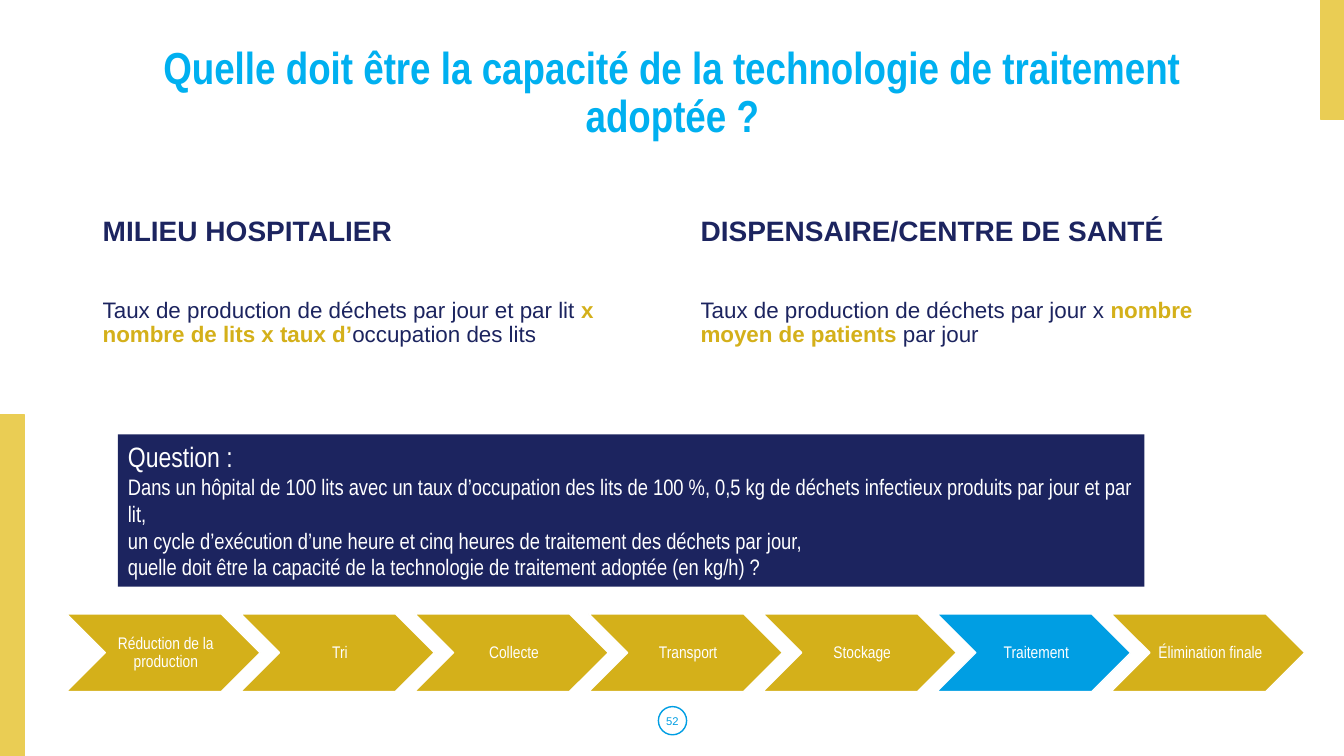
from pptx import Presentation
from pptx.dml.color import RGBColor
from pptx.enum.shapes import MSO_SHAPE
from pptx.enum.text import MSO_ANCHOR, PP_ALIGN
from pptx.util import Inches, Pt

THEME = {
    "navy": "1C245F", "gold": "D4B01A", "pale_gold": "EACD54",
    "blue": "009EE3", "title_blue": "00B0F0", "white": "FFFFFF",
    "narrow": "Arial Narrow", "sans": "Arial",
    "title": 32, "heading": 20, "body": 16, "step": 12, "number": 8,
}

TITLE = "Quelle doit être la capacité de la technologie de traitement adoptée ?"
COLUMNS = [
    (0.92, 5.08, "MILIEU HOSPITALIER", [
        ("Taux de production de déchets par jour et par lit", False),
        (" x nombre de lits x taux d’", True),
        ("occupation des lits", False),
    ]),
    (6.85, 5.57, "DISPENSAIRE/CENTRE DE SANTÉ", [
        ("Taux de production de déchets par jour x ", False),
        ("nombre moyen de patients", True),
        (" par jour", False),
    ]),
]
QUESTION_HEADING = "Question :"
QUESTION = [
    "Dans un hôpital de 100 lits avec un taux d’occupation des lits de 100 %, 0,5 kg de déchets infectieux produits par jour et par lit,",
    "un cycle d’exécution d’une heure et cinq heures de traitement des déchets par jour,",
    "quelle doit être la capacité de la technologie de traitement adoptée (en kg/h) ?",
]
STEPS = ["Réduction de la production", "Tri", "Collecte", "Transport",
         "Stockage", "Traitement", "Élimination finale"]
CURRENT_STEP = "Traitement"
PAGE_NUMBER = "52"

SIDE_BARS = [(0, 4.11, 0.24, 3.39), (13.1, 0, 0.24, 1.18)]
FIRST_STEP, LAST_STEP = 0.66, 11.02
STEP_TOP, STEP_WIDTH, STEP_HEIGHT = 6.09, 1.92, 0.77
BOX_INSETS = (0.1, 0.05, 0.1, 0.05)
STEP_INSETS = (0.07, 0.02, 0.02, 0.02)


def color(name):
    return RGBColor.from_string(THEME[name])


def add_block(slide, kind, box, fill=None, line=None):
    block = slide.shapes.add_shape(kind, *map(Inches, box))
    block.shadow.inherit = False
    for part, tint in ((block.fill, fill), (block.line.fill, line)):
        if tint:
            part.solid()
            part.fore_color.rgb = color(tint)
        else:
            part.background()
    if line:
        block.line.width = Pt(1)
    return block


def write(block, paragraphs, face, insets=BOX_INSETS, anchor=MSO_ANCHOR.TOP, wrap=True):
    frame = block.text_frame
    frame.word_wrap = wrap
    frame.vertical_anchor = anchor
    for side, inset in zip(("left", "top", "right", "bottom"), insets):
        setattr(frame, f"margin_{side}", Inches(inset))
    for index, (runs, layout) in enumerate(paragraphs):
        paragraph = frame.add_paragraph() if index else frame.paragraphs[0]
        for name, value in layout.items():
            setattr(paragraph, name, value)
        for text, size, tint, bold in runs:
            run = paragraph.add_run()
            run.text = text
            run.font.color.rgb = color(tint)
            looks = {"name": THEME[face], "size": Pt(THEME[size]), "bold": bold}
            for name, value in looks.items():
                setattr(run.font, name, value)


def add_text(slide, box, paragraphs, face):
    write(slide.shapes.add_textbox(*map(Inches, box)), paragraphs, face)


def main():
    deck = Presentation()
    deck.slide_width, deck.slide_height = Inches(13.33), Inches(7.5)
    slide = deck.slides.add_slide(deck.slide_layouts[6])
    left = {"alignment": PP_ALIGN.LEFT}
    center = {"alignment": PP_ALIGN.CENTER}
    tight = {"line_spacing": 0.9}

    for box in SIDE_BARS:
        add_block(slide, MSO_SHAPE.RECTANGLE, box, "pale_gold", "pale_gold")

    pitch = (LAST_STEP - FIRST_STEP) / (len(STEPS) - 1)
    for index, step in enumerate(STEPS):
        box = (FIRST_STEP + index * pitch, STEP_TOP, STEP_WIDTH, STEP_HEIGHT)
        fill = "blue" if step == CURRENT_STEP else "gold"
        chevron = add_block(slide, MSO_SHAPE.CHEVRON, box, fill, "white")
        write(chevron, [([(step, "step", "white", False)], center | tight)],
              "narrow", STEP_INSETS, MSO_ANCHOR.MIDDLE)

    add_text(slide, (0.92, 0.4, 11.5, 0.78),
             [([(TITLE, "title", "title_blue", True)], center | tight)], "narrow")

    for x, width, heading, formula in COLUMNS:
        runs = [(text, "body", "gold" if strong else "navy", strong)
                for text, strong in formula]
        add_text(slide, (x, 2.11, width, 1.6), [
            ([(heading, "heading", "navy", True)], left | tight),
            (runs, left | tight | {"space_before": Pt(36.5)}),
        ], "sans")

    badge = add_block(slide, MSO_SHAPE.OVAL, (6.53, 7.01, 0.28, 0.28), line="blue")
    write(badge, [([(PAGE_NUMBER, "number", "blue", False)], center)],
          "sans", (0, 0, 0, 0), MSO_ANCHOR.MIDDLE, wrap=False)

    question = add_block(slide, MSO_SHAPE.RECTANGLE, (1.17, 4.31, 10.18, 1.51), "navy")
    lines = [(QUESTION_HEADING, "heading")] + [(text, "body") for text in QUESTION]
    write(question, [([(text, size, "white", False)], left) for text, size in lines], "narrow")

    deck.save("out.pptx")


if __name__ == "__main__":
    main()
